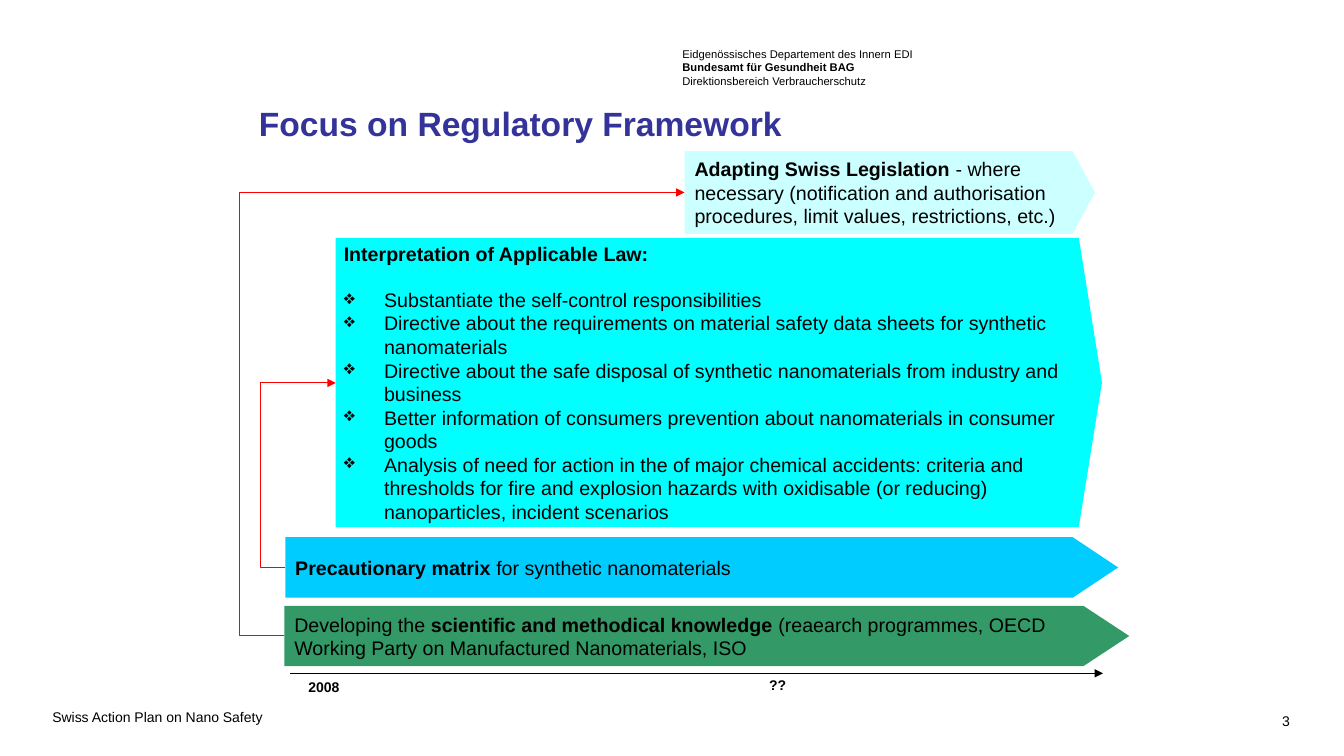
import pptx
import pptx.util
import pptx.dml.color
import pptx.enum.shapes
import pptx.enum.text
import pptx.oxml.ns
import pptx.oxml.xmlchemy
from pptx.util import Inches

COLORS = {
    "text": "000000",
    "title": "333399",
    "legislation": "CCFFFF",
    "law": "00FFFF",
    "matrix": "00CCFF",
    "knowledge": "339966",
    "feedback": "FF0000",
}

LAW_MEASURES = [
    "Substantiate the self-control responsibilities",
    "Directive about the requirements on material safety data sheets for synthetic nanomaterials",
    "Directive about the safe disposal of synthetic nanomaterials from industry and business",
    "Better information of consumers prevention about nanomaterials in consumer goods",
    "Analysis of need for action in the of major chemical accidents: criteria and thresholds for "
    "fire and explosion hazards with oxidisable (or reducing) nanoparticles, incident scenarios",
]


def rgb(name):
    return pptx.dml.color.RGBColor.from_string(COLORS[name])


def make_xml(tag, **attributes):
    element = pptx.oxml.xmlchemy.OxmlElement(tag)
    for key, value in attributes.items():
        element.set(key, value)
    return element


def write_paragraphs(frame, paragraphs, size, color="text",
                     align=pptx.enum.text.PP_ALIGN.LEFT):
    """Each paragraph is a list of (text, bold) runs."""
    frame.word_wrap = True
    for index, runs in enumerate(paragraphs):
        paragraph = frame.add_paragraph() if index else frame.paragraphs[0]
        paragraph.alignment = align
        paragraph.font.name = "Arial"
        paragraph.font.size = pptx.util.Pt(size)
        paragraph.font.color.rgb = rgb(color)
        paragraph.font.bold = runs[0][1] if len(runs) == 1 else False
        for text, bold in runs:
            run = paragraph.add_run()
            run.text = text
            if len(runs) > 1:
                run.font.bold = bold


def add_text(slide, box, paragraphs, size, **style):
    shape = slide.shapes.add_textbox(*map(Inches, box))
    write_paragraphs(shape.text_frame, paragraphs, size, **style)


def add_stage(slide, box, point, fill, paragraphs):
    """Pentagon arrow for one stage of the plan."""
    shape = slide.shapes.add_shape(
        pptx.enum.shapes.MSO_SHAPE.PENTAGON, *map(Inches, box))
    shape.adjustments[0] = point
    shape.shadow.inherit = False
    shape.fill.solid()
    shape.fill.fore_color.rgb = rgb(fill)
    shape.line.fill.background()
    shape.text_frame.vertical_anchor = pptx.enum.text.MSO_ANCHOR.MIDDLE
    write_paragraphs(shape.text_frame, paragraphs, 14)
    return shape.text_frame


def format_law_list(frame):
    """Hanging indent throughout, diamond bullets below the heading."""
    frame.margin_left, frame.margin_right = Inches(0.08), Inches(0.02)
    indent = Inches(0.4)
    for paragraph in frame.paragraphs:
        properties = paragraph._p.get_or_add_pPr()
        properties.set("marL", str(indent))
        properties.set("indent", str(-indent))
    heading, *measures = frame.paragraphs
    heading.space_after = pptx.util.Pt(16)
    for paragraph in measures:
        paragraph._p.get_or_add_pPr().insert_element_before(
            make_xml("a:buChar", char="❖"), "a:tabLst", "a:defRPr", "a:extLst")


def add_arrow(slide, start, end, color, bend_x=None):
    """Straight arrow, or an elbow whose upright runs at bend_x."""
    kinds = pptx.enum.shapes.MSO_CONNECTOR
    kind = kinds.STRAIGHT if bend_x is None else kinds.ELBOW
    connector = slide.shapes.add_connector(kind, *map(Inches, start + end))
    connector.line.color.rgb = rgb(color)
    connector.line.width = pptx.util.Pt(0.75)
    properties = connector._element.spPr
    line = properties.find(pptx.oxml.ns.qn("a:ln"))
    line.append(make_xml("a:tailEnd", type="triangle"))
    properties.append(make_xml("a:effectLst"))
    if bend_x is not None:
        ratio = (bend_x - start[0]) / (end[0] - start[0])
        guides = properties.find(".//" + pptx.oxml.ns.qn("a:avLst"))
        guides.append(make_xml("a:gd", name="adj1", fmla=f"val {round(ratio * 100000)}"))


def main():
    presentation = pptx.Presentation()
    presentation.slide_width = Inches(13.33)
    presentation.slide_height = Inches(7.5)
    slide = presentation.slides.add_slide(presentation.slide_layouts[6])

    # Letterhead, title and footer
    add_text(slide, (6.67, 0.42, 6, 0.51), [
        [("Eidgenössisches Departement des Innern EDI", False)],
        [("Bundesamt für Gesundheit BAG", True)],
        [("Direktionsbereich Verbraucherschutz", False)],
    ], 8)
    add_text(slide, (2.47, 0.97, 8.66, 0.51),
             [[("Focus on Regulatory Framework", True)]], 24, color="title")
    add_text(slide, (0.42, 6.98, 10.78, 0.52),
             [[("Swiss Action Plan on Nano Safety", False)]], 10)
    add_text(slide, (11.67, 7.02, 1.22, 0.27), [[("3", False)]], 10,
             align=pptx.enum.text.PP_ALIGN.RIGHT)

    # Stages, from top to bottom
    add_stage(slide, (6.79, 1.5, 4.07, 0.82), 0.27, "legislation", [[
        ("Adapting Swiss Legislation", True),
        (" - where necessary (notification and authorisation procedures, "
         "limit values, restrictions, etc.)", False)]])
    law = add_stage(slide, (3.33, 2.36, 7.6, 2.87), 0.08, "law",
                    [[("Interpretation of Applicable Law:", True)]]
                    + [[(measure, False)] for measure in LAW_MEASURES])
    format_law_list(law)
    add_stage(slide, (2.83, 5.33, 8.26, 0.6), 0.75, "matrix", [[
        ("Precautionary matrix", True),
        (" for synthetic nanomaterials", False)]])
    add_stage(slide, (2.82, 6.01, 8.38, 0.6), 0.76, "knowledge", [[
        ("Developing the ", False),
        ("scientific and methodical knowledge ", True),
        ("(reaearch programmes, OECD Working Party on Manufactured "
         "Nanomaterials, ISO", False)]])

    # Feedback arrows between stages
    add_arrow(slide, (2.83, 5.63), (3.33, 3.8), "feedback", bend_x=2.58)
    add_arrow(slide, (2.82, 6.31), (6.79, 1.91), "feedback", bend_x=2.38)

    # Time axis
    add_arrow(slide, (2.88, 6.68), (10.94, 6.68), "text")
    add_text(slide, (2.96, 6.68, 0.54, 0.27), [[("2008", True)]], 10)
    add_text(slide, (7.53, 6.66, 0.54, 0.27), [[("??", True)]], 10)

    presentation.save("out.pptx")


if __name__ == "__main__":
    main()
